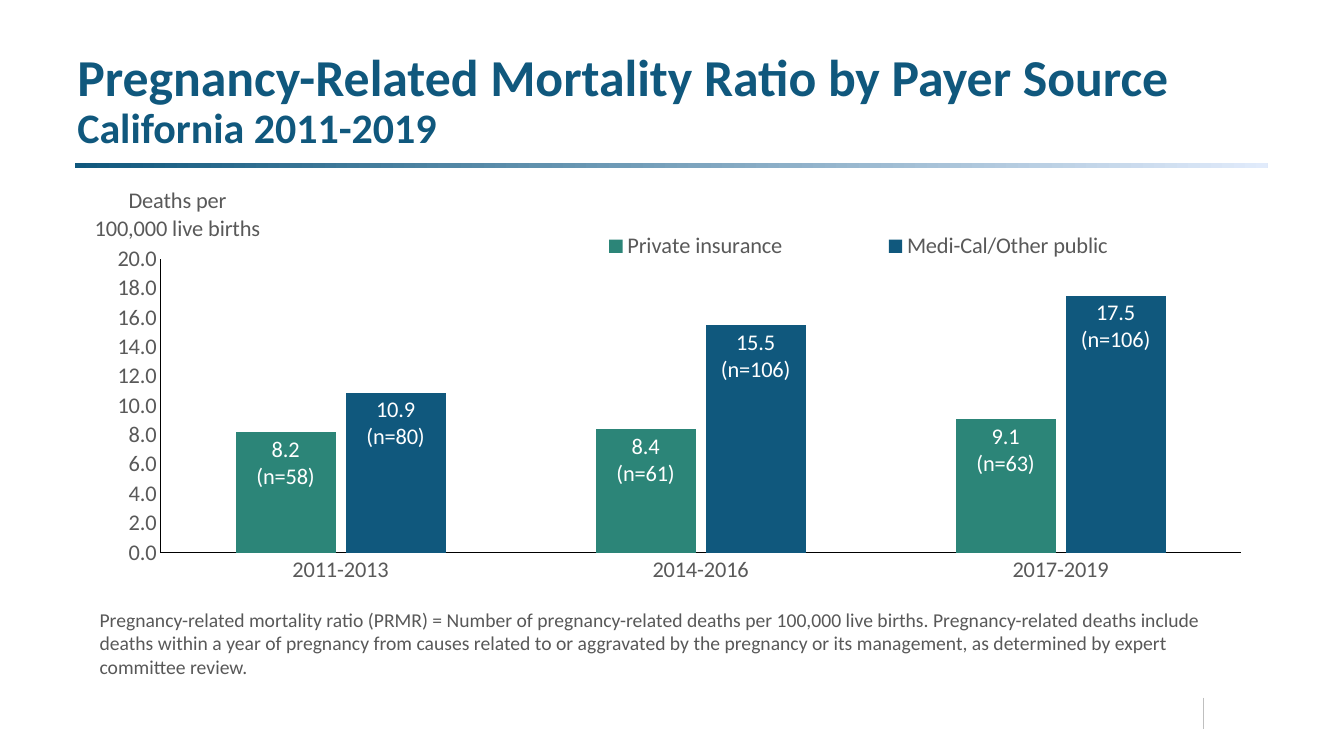
from dataclasses import dataclass

from lxml.etree import SubElement
from pptx import Presentation
from pptx.chart.data import CategoryChartData
from pptx.dml.color import RGBColor
from pptx.enum.chart import XL_CHART_TYPE, XL_LABEL_POSITION, XL_LEGEND_POSITION, XL_TICK_MARK
from pptx.enum.shapes import MSO_CONNECTOR, MSO_SHAPE
from pptx.enum.text import MSO_ANCHOR, PP_ALIGN
from pptx.oxml import parse_xml
from pptx.oxml.ns import nsdecls, qn
from pptx.util import Cm, Pt

COLORS = {
    "blue": "10587D", "pale": "E1EBFB", "green": "2C8578", "grey": "595959",
    "note": "585858", "divider": "BFBFBF", "black": "000000", "white": "FFFFFF",
}
FONT = "Calibri"
PERIODS = ["2011-2013", "2014-2016", "2017-2019"]


@dataclass
class Payer:
    name: str
    color: str
    ratios: list[float]
    deaths: list[int]


PAYERS = [
    Payer("Private insurance", "green", [8.2, 8.4, 9.1], [58, 61, 63]),
    Payer("Medi-Cal/Other public", "blue", [10.9, 15.5, 17.5], [80, 106, 106]),
]


def rgb(name: str) -> RGBColor:
    return RGBColor.from_string(COLORS[name])


def set_font(font, size: float = 16, color: str = "grey", bold: bool = False) -> None:
    font.name, font.size, font.bold = FONT, Pt(size), bold
    font.color.rgb = rgb(color)


def add_text(p, text: str, **fmt) -> None:
    r = p.add_run()
    r.text = text
    set_font(r.font, **fmt)


def add_lines(tf, lines: list[str], **fmt) -> None:
    """Write one centred paragraph per line."""
    for i, line in enumerate(lines):
        p = tf.add_paragraph() if i else tf.paragraphs[0]
        p.alignment = PP_ALIGN.CENTER
        add_text(p, line, **fmt)


def set_layout(parent, index: int, **values) -> None:
    """Place a chart part by fractions of the chart area."""
    for old in parent.findall(qn("c:layout")):
        parent.remove(old)
    layout = parse_xml(f"<c:layout {nsdecls('c')}><c:manualLayout/></c:layout>")
    for tag, value in values.items():
        SubElement(layout[0], qn(f"c:{tag}")).set("val", str(value))
    parent.insert(index, layout)


def add_box(s, left: float, top: float, width: float, height: float):
    tf = s.shapes.add_textbox(Cm(left), Cm(top), Cm(width), Cm(height)).text_frame
    tf.word_wrap = True
    return tf


def style_axis(axis) -> None:
    axis.has_major_gridlines = False
    axis.major_tick_mark = axis.minor_tick_mark = XL_TICK_MARK.NONE
    axis.format.line.color.rgb = rgb("black")
    axis.format.line.width = Pt(0.75)
    set_font(axis.tick_labels.font)


def add_payer_chart(s) -> None:
    data = CategoryChartData(number_format="0.0")
    data.categories = PERIODS
    for payer in PAYERS:
        data.add_series(payer.name, payer.ratios)
    chart = s.shapes.add_chart(XL_CHART_TYPE.COLUMN_CLUSTERED, Cm(1.7), Cm(4.5),
                               Cm(30.48), Cm(10.67), data).chart
    chart.has_title = False
    set_font(chart.font, color="black")
    space = chart._chartSpace
    set_layout(space.xpath("c:chart/c:plotArea")[0], 0, layoutTarget="inner",
               xMode="edge", yMode="edge", x=0.077, y=0.19, w=0.893, h=0.694)

    # Axes
    style_axis(chart.category_axis)
    axis = chart.value_axis
    style_axis(axis)
    axis.minimum_scale, axis.maximum_scale, axis.major_unit = 0, 20, 2
    axis.tick_labels.number_format = "0.0"
    axis.tick_labels.number_format_is_linked = False
    tf = axis.axis_title.text_frame
    add_lines(tf, ["Deaths per", "100,000 live births"])
    body = space.xpath(".//c:valAx/c:title//a:bodyPr")[0]
    body.set("rot", "0")
    body.set("vert", "horz")
    set_layout(space.xpath(".//c:valAx/c:title")[0], 1,
               xMode="edge", yMode="edge", x=0.02, y=0.01)

    # Legend
    chart.has_legend = True
    chart.legend.position = XL_LEGEND_POSITION.TOP
    chart.legend.include_in_layout = False
    set_font(chart.legend.font)
    set_layout(space.xpath(".//c:legend")[0], 1, xMode="edge", yMode="edge",
               x=0.366, y=0.12, w=0.576, h=0.08)

    # Columns and their labels
    plot = chart.plots[0]
    plot.gap_width, plot.overlap, plot.vary_by_categories = 150, -10, False
    for series, payer in zip(plot.series, PAYERS):
        series.format.fill.solid()
        series.format.fill.fore_color.rgb = rgb(payer.color)
        labels = series.data_labels
        labels.show_value = True
        labels.number_format, labels.number_format_is_linked = "0.0", False
        labels.position = XL_LABEL_POSITION.INSIDE_END
        set_font(labels.font, color="white")
        for i, (ratio, n) in enumerate(zip(payer.ratios, payer.deaths)):
            label = series.points[i].data_label
            add_lines(label.text_frame, [f"{ratio:.1f}", f"(n={n})"], color="white")
            label.position = XL_LABEL_POSITION.INSIDE_END


def main() -> None:
    prs = Presentation()
    prs.slide_width, prs.slide_height = Cm(33.87), Cm(19.05)
    s = prs.slides.add_slide(prs.slide_layouts[6])

    # Divider at the bottom right
    divider = s.shapes.add_connector(MSO_CONNECTOR.STRAIGHT, Cm(30.33), Cm(17.58),
                                     Cm(30.33), Cm(18.36))
    divider.line.color.rgb = rgb("divider")
    divider.line.width = Pt(0.5)
    SubElement(divider._element.spPr, qn("a:effectLst"))

    # Gradient rule under the title
    rule = s.shapes.add_shape(MSO_SHAPE.RECTANGLE, Cm(1.88), Cm(4.11), Cm(30.07), Cm(0.13))
    rule.shadow.inherit = False
    rule.line.fill.background()
    rule.fill.gradient()
    rule.fill.gradient_angle = 0
    for stop, position, color in zip(rule.fill.gradient_stops, (0, 1), ("blue", "pale")):
        stop.position = position
        stop.color.rgb = rgb(color)

    # Title
    tf = add_box(s, 1.7, 0.91, 30.48, 3.07)
    tf.vertical_anchor = MSO_ANCHOR.BOTTOM
    p = tf.paragraphs[0]
    p.line_spacing = 0.9
    add_text(p, "Pregnancy-Related Mortality Ratio by Payer Source",
             size=37, color="blue", bold=True)
    p.add_line_break()
    add_text(p, "California 2011-2019", size=30, color="blue", bold=True)

    add_payer_chart(s)

    # Definition
    tf = add_box(s, 2.26, 15.19, 28.96, 2.06)
    add_text(tf.paragraphs[0],
             "Pregnancy-related mortality ratio (PRMR) = Number of pregnancy-related deaths "
             "per 100,000 live births. Pregnancy-related deaths include deaths within a year "
             "of pregnancy from causes related to or aggravated by the pregnancy or its "
             "management, as determined by expert committee review.",
             size=14, color="note")

    prs.save("out.pptx")


if __name__ == "__main__":
    main()
